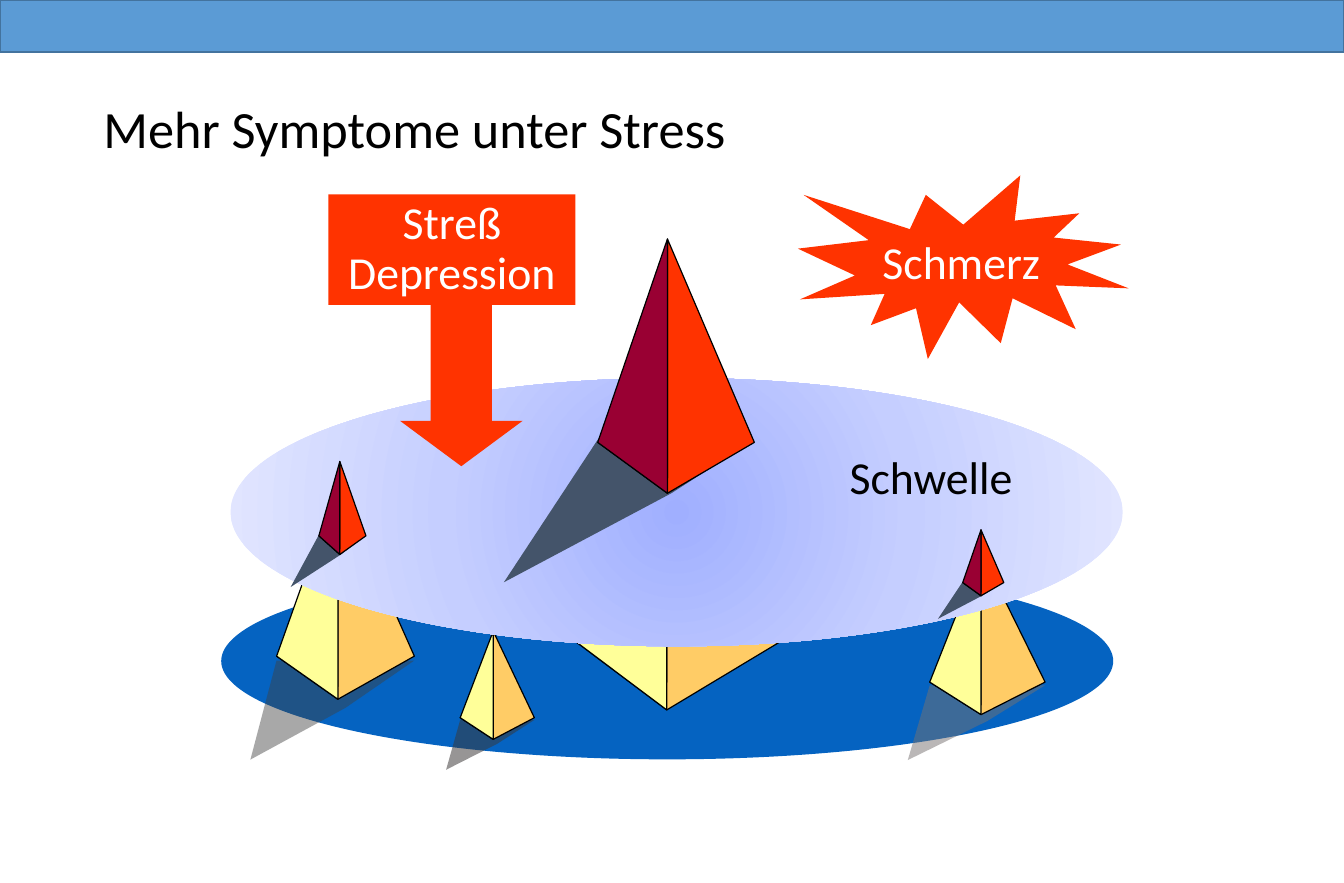
from lxml import etree
from pptx import Presentation
from pptx.dml.color import RGBColor
from pptx.enum.shapes import MSO_SHAPE
from pptx.enum.text import MSO_ANCHOR, PP_ALIGN
from pptx.oxml import parse_xml
from pptx.oxml.ns import qn
from pptx.util import Inches, Pt

RECT, OVAL = MSO_SHAPE.RECTANGLE, MSO_SHAPE.OVAL
ARROW, SEAL = MSO_SHAPE.DOWN_ARROW, MSO_SHAPE.EXPLOSION1
TOP, MIDDLE = MSO_ANCHOR.TOP, MSO_ANCHOR.MIDDLE
LEFT, CENTER = PP_ALIGN.LEFT, PP_ALIGN.CENTER

WIDTH, HEIGHT = Inches(11.42), Inches(7.5)
COL, ROW = WIDTH / 100, HEIGHT / 100
FONT = "Calibri"
COLORS = {
    "bar": "5B9BD5", "bar_line": "43739E", "text": "000000", "white": "FFFFFF",
    "ground": "0563C1", "alarm": "FF3300", "alarm_dark": "990033",
    "sand": "FFCC66", "sand_light": "FFFF99", "slate": "44546A",
    "gray": "767171", "brown": "3B3838", "dark": "404040",
}
THRESHOLD_STOPS = [(0, "A0AFFF"), (50, "C5CEFF"), (100, "E3E7FF")]

APEX, BASE = 0.445, 0.8
RIGHT_FACE = [(0, BASE), (APEX, 1), (1, BASE), (APEX, 0), (APEX, 0.94)]
LEFT_FACE = [(0, BASE), (APEX, 0), (APEX, 1)]
LOW_SHADOW = [(0, 0.82), (-0.19, 1.28), (0.5, 1.04), (1, 0.82)]
HIGH_SHADOW = [(0.02, 0.77), (-0.6, 1.35), (0.47, 1), (1, 0.79)]


def rgb(name):
    """Return the named colour."""
    return RGBColor.from_string(COLORS[name])


def grid(x, y, w, h):
    """Turn columns and rows into slide lengths."""
    return round(x * COL), round(y * ROW), round(w * COL), round(h * ROW)


def paint(sp, fill, line=None, weight=0.75, opacity=None):
    """Set fill, outline and opacity and drop the shadow."""
    sp.shadow.inherit = False
    sp.fill.solid()
    sp.fill.fore_color.rgb = rgb(fill)
    if opacity:
        color = sp.fill._xPr.find(".//" + qn("a:srgbClr"))
        etree.SubElement(color, qn("a:alpha"), val=str(opacity * 1000))
    if line:
        sp.line.color.rgb = rgb(line)
        sp.line.width = Pt(weight)
    else:
        sp.line.fill.background()


def add_preset(slide, kind, box, fill, line=None, weight=0.75):
    """Add a flat preset shape in a grid box."""
    sp = slide.shapes.add_shape(kind, *grid(*box))
    paint(sp, fill, line, weight)
    return sp


def write(sp, lines, size, color="text", align=LEFT, anchor=TOP, wrap=False, spacing=None):
    """Write one paragraph for each line."""
    tf = sp.text_frame
    tf.word_wrap = wrap
    tf.vertical_anchor = anchor
    tf.text = "\n".join(lines)
    for p in tf.paragraphs:
        p.alignment = align
        p.line_spacing = spacing
        p.font.name = FONT
        p.font.size = Pt(size)
        p.font.color.rgb = rgb(color)


def add_face(group, points, box, fill, line=None, opacity=None):
    """Draw a polygon given as shares of a grid box."""
    x, y, w, h = grid(*box)
    corners = [(round(x + px * w), round(y + py * h)) for px, py in points]
    builder = group.shapes.build_freeform(*corners[0])
    builder.add_line_segments(corners[1:], close=True)
    paint(builder.convert_to_shape(), fill, line, opacity=opacity)


def add_pyramid(slide, box, right, left, shadow=None, outline=None, opacity=None):
    """Draw a two-sided pyramid with an optional shadow."""
    group = slide.shapes.add_group_shape()
    if shadow:
        add_face(group, outline, box, shadow, opacity=opacity)
    add_face(group, RIGHT_FACE, box, right, "text")
    add_face(group, LEFT_FACE, box, left, "text")


def add_symptom(slide, box):
    """Draw a red pyramid standing on the threshold."""
    add_pyramid(slide, box, "alarm", "alarm_dark", "slate", HIGH_SHADOW)


def add_header(slide):
    """Add the top bar and the title."""
    add_preset(slide, RECT, (0, 0, 100, 5.87), "bar", "bar_line", 1)
    title = slide.shapes.add_textbox(*grid(6.83, 7.73, 86.25, 14.4))
    write(title, ["Mehr Symptome unter Stress"], 32, anchor=MIDDLE, wrap=True, spacing=0.9)


def add_ground(slide, box):
    """Add the lower plane with its yellow pyramids."""
    add_preset(slide, OVAL, box, "ground")
    for place, shadow, opacity in [
        ((69.18, 62.53, 8.58, 18.4), "gray", 50),
        ((34.24, 71.47, 5.52, 12.27), "brown", 53),
        ((20.58, 54.8, 10.25, 24.4), "dark", 45),
        ((40.46, 28.13, 20.58, 52.27), None, None),
    ]:
        add_pyramid(slide, place, "sand", "sand_light", shadow, LOW_SHADOW, opacity)


def add_threshold(slide, box):
    """Add the upper plane with a radial gradient."""
    sp = add_preset(slide, OVAL, box, "white")
    stops = "".join(
        f'<a:gs pos="{pos * 1000}"><a:srgbClr val="{color}"/></a:gs>'
        for pos, color in THRESHOLD_STOPS
    )
    gradient = parse_xml(
        '<a:gradFill xmlns:a="http://schemas.openxmlformats.org/drawingml/2006/main" '
        f'rotWithShape="1"><a:gsLst>{stops}</a:gsLst><a:path path="circle">'
        '<a:fillToRect l="50000" t="50000" r="50000" b="50000"/></a:path></a:gradFill>'
    )
    props = sp._element.spPr
    props.replace(props.find(qn("a:solidFill")), gradient)


def add_labels(slide):
    """Add the pain burst, the threshold label and the stress arrow."""
    pain = add_preset(slide, SEAL, (59.37, 19.87, 24.61, 20.8), "alarm")
    write(pain, ["Schmerz"], 28, "white", CENTER, MIDDLE)
    label = slide.shapes.add_textbox(*grid(62.35, 50.13, 14.8, 8.13))
    write(label, ["Schwelle"], 28)
    arrow = add_preset(slide, ARROW, (29.77, 32.27, 9.11, 20.53), "alarm")
    arrow.adjustments[0], arrow.adjustments[1] = 0.5, 0.37
    stress = add_preset(slide, RECT, (24.43, 22, 18.39, 12.53), "alarm")
    write(stress, ["Streß", "Depression"], 28, "white", CENTER, wrap=True, spacing=0.9)


def main():
    """Build and save the slide."""
    prs = Presentation()
    prs.slide_width, prs.slide_height = WIDTH, HEIGHT
    slide = prs.slides.add_slide(prs.slide_layouts[6])
    add_header(slide)
    add_ground(slide, (16.46, 63.73, 66.37, 22.27))
    add_threshold(slide, (17.16, 42.8, 66.37, 30.4))
    add_symptom(slide, (44.48, 27.07, 11.65, 28.8))
    add_labels(slide)
    add_symptom(slide, (23.73, 52.27, 3.5, 10.53))
    add_symptom(slide, (71.63, 60, 3.06, 7.47))
    prs.save("out.pptx")


if __name__ == "__main__":
    main()
